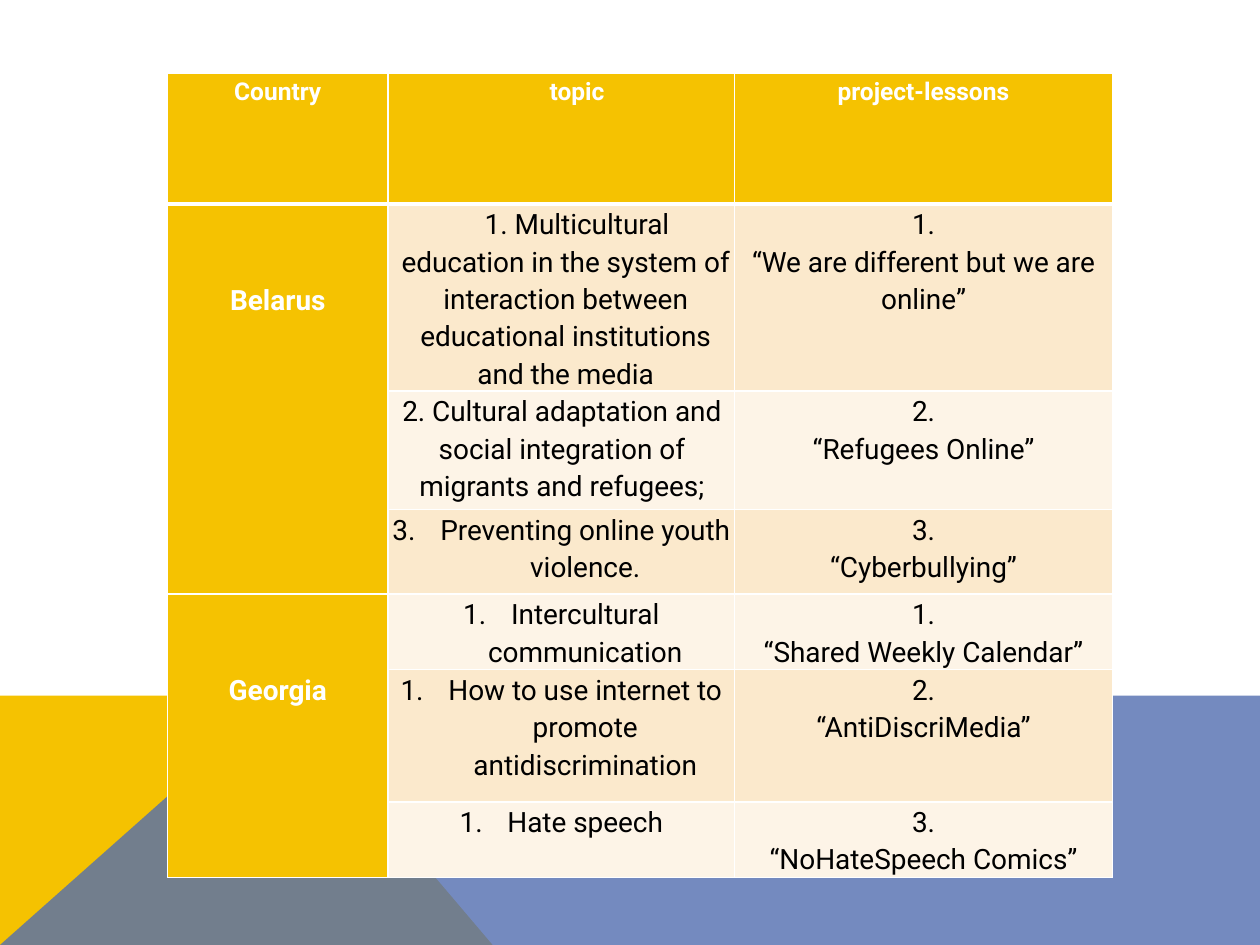
from dataclasses import dataclass

from lxml import etree
from pptx import Presentation
from pptx.dml.color import RGBColor
from pptx.enum.text import PP_ALIGN
from pptx.oxml.ns import qn
from pptx.util import Inches, Pt

CENTER = PP_ALIGN.CENTER


@dataclass(frozen=True)
class Theme:
    font: str = "Roboto"
    gold: str = "F5C201"
    blue: str = "526DB0"
    white: str = "FFFFFF"
    black: str = "000000"
    bands: tuple = ("FBE9CC", "FDF4E7")
    header_size: int = 14
    body_size: int = 16


THEME = Theme()


def fill_cell(cell, paragraphs, fill, color, size, bold, bottom_width=1):
    cell.fill.solid()
    cell.fill.fore_color.rgb = RGBColor.from_string(fill)
    cell.margin_left = cell.margin_right = Inches(0.03)
    cell.margin_top = cell.margin_bottom = 0
    cell.text = "\n".join(paragraphs)
    for paragraph in cell.text_frame.paragraphs:
        paragraph.alignment = CENTER
        paragraph.line_spacing = 1.15
        paragraph.font.name = THEME.font
        paragraph.font.size = Pt(size)
        paragraph.font.bold = bold
        paragraph.font.color.rgb = RGBColor.from_string(color)
    properties = cell._tc.get_or_add_tcPr()
    for position, side in enumerate("LRTB"):
        width = bottom_width if side == "B" else 1
        border = etree.Element(qn(f"a:ln{side}"), w=str(Pt(width)))
        paint = etree.SubElement(border, qn("a:solidFill"))
        etree.SubElement(paint, qn("a:srgbClr"), val=THEME.white)
        properties.insert(position, border)


def indent(paragraph, left, first_line):
    properties = paragraph._p.get_or_add_pPr()
    properties.set("marL", str(Inches(left)))
    properties.set("indent", str(Inches(first_line)))
    return properties


prs = Presentation()
prs.slide_width, prs.slide_height = Inches(10), Inches(7.5)
slide = prs.slides.add_slide(prs.slide_layouts[6])

backdrops = [
    (THEME.gold, 100, [(0, 7.5), (0, 5.52), (2.23, 5.52), (3.91, 7.5)]),
    (THEME.blue, 80, [(0, 7.5), (2.23, 5.52), (10, 5.52), (10, 7.5)]),
]
for color, opacity, corners in backdrops:
    points = [(Inches(x), Inches(y)) for x, y in corners]
    outline = slide.shapes.build_freeform(*points[0])
    outline.add_line_segments(points[1:], close=True)
    backdrop = outline.convert_to_shape()
    backdrop.shadow.inherit = False
    backdrop.line.fill.background()
    backdrop.fill.solid()
    backdrop.fill.fore_color.rgb = RGBColor.from_string(color)
    if opacity < 100:
        paint = backdrop._element.spPr.find(qn("a:solidFill"))
        etree.SubElement(paint[0], qn("a:alpha"), val=str(opacity * 1000))

headings = ["Country", "topic", "project-lessons"]
countries = {1: "Belarus", 4: "Georgia"}
lessons = [
    ("1. Multicultural education in the system of interaction between "
     "educational institutions and the media",
     0.07, 0.18, None, ["1.", "“We are different but we are online”"]),
    ("2. Cultural adaptation and social integration of migrants and refugees;",
     0.01, 0, None, ["2.", "“Refugees Online”"]),
    ("Preventing online youth violence.",
     0.38, -0.38, 3, ["3.", "“Cyberbullying”"]),
    ("Intercultural communication",
     0.38, -0.38, 1, ["1.", "“Shared Weekly Calendar”"]),
    ("How to use internet to promote antidiscrimination",
     0.38, -0.38, 1, ["2.", "“AntiDiscriMedia”"]),
    ("Hate speech",
     0.38, -0.38, 1, ["3.", "“NoHateSpeech Comics”"]),
]
column_widths = [1.75, 2.75, 3]
row_heights = [1.04, 1.48, 0.94, 0.67, 0.6, 1.05, 0.6]

table = slide.shapes.add_table(
    len(row_heights), len(column_widths), Inches(1.33), Inches(0.58),
    Inches(sum(column_widths)), Inches(sum(row_heights))).table
for column, width in zip(table.columns, column_widths):
    column.width = Inches(width)
for row, height in zip(table.rows, row_heights):
    row.height = Inches(height)

for column, heading in enumerate(headings):
    fill_cell(table.cell(0, column), [heading], THEME.gold, THEME.white,
              THEME.header_size, True, bottom_width=3)
indent(table.cell(0, 1).text_frame.paragraphs[0], 0.25, 0)

for row, country in countries.items():
    country_cell = table.cell(row, 0)
    country_cell.merge(table.cell(row + 2, 0))
    fill_cell(country_cell, [country], THEME.gold, THEME.white,
              THEME.body_size, True)
    country_cell.margin_top = Inches(0.6)

for row, (topic, left, first_line, number, projects) in enumerate(lessons, 1):
    band = THEME.bands[(row - 1) % 2]
    topic_cell = table.cell(row, 1)
    fill_cell(topic_cell, [topic], band, THEME.black, THEME.body_size, False)
    properties = indent(topic_cell.text_frame.paragraphs[0], left, first_line)
    if number:
        numbering = etree.Element(qn("a:buAutoNum"), type="arabicPeriod",
                                  startAt=str(number))
        properties.find(qn("a:lnSpc")).addnext(numbering)
    fill_cell(table.cell(row, 2), projects, band, THEME.black,
              THEME.body_size, False)

prs.save("out.pptx")
